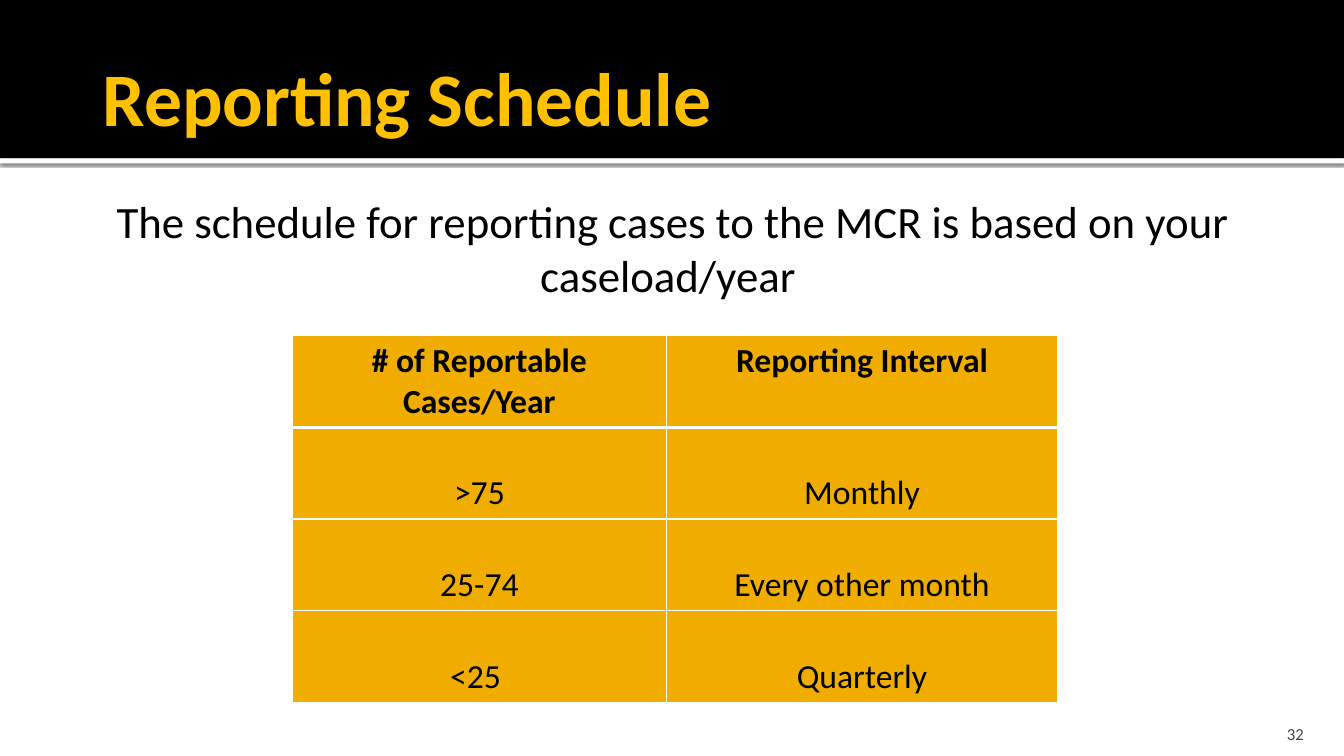
from lxml.etree import SubElement
from pptx import Presentation
from pptx.dml.color import RGBColor
from pptx.enum.shapes import MSO_SHAPE
from pptx.enum.text import MSO_ANCHOR as Anchor, PP_ALIGN as Align
from pptx.oxml import parse_xml
from pptx.oxml.ns import nsdecls, qn
from pptx.util import Inches, Pt

BLACK = RGBColor(0x00, 0x00, 0x00)
WHITE = RGBColor(0xFF, 0xFF, 0xFF)
GOLD = RGBColor(0xFF, 0xC0, 0x00)
AMBER = RGBColor(0xF0, 0xAD, 0x00)
GREY = RGBColor(0x45, 0x45, 0x45)


def write(frame, text, size, color=BLACK, bold=False, align=Align.LEFT,
          anchor=Anchor.TOP, insets=(0.1, 0.05, 0.1, 0.05)):
    """Fill a text frame with one paragraph; insets run left, top, right, bottom."""
    frame.word_wrap = True
    frame.vertical_anchor = anchor
    (frame.margin_left, frame.margin_top,
     frame.margin_right, frame.margin_bottom) = map(Inches, insets)
    paragraph = frame.paragraphs[0]
    paragraph.alignment = align
    run = paragraph.add_run()
    run.text = text
    run.font.name = "Calibri"
    run.font.size = Pt(size)
    run.font.bold = bold
    run.font.color.rgb = color


def add_border(cell, side, points):
    line = SubElement(cell._tc.get_or_add_tcPr(), qn(f"a:ln{side}"), w=str(Pt(points)))
    fill = SubElement(line, qn("a:solidFill"))
    SubElement(fill, qn("a:srgbClr"), val=str(WHITE))


deck = Presentation()
deck.slide_width, deck.slide_height = Inches(13.33), Inches(7.5)
slide = deck.slides.add_slide(deck.slide_layouts[6])
shapes = slide.shapes
slide.background.fill.solid()
slide.background.fill.fore_color.rgb = WHITE

# Header band with a shadowed white strip under it
for top, height, color in [(1.57, 0.05, WHITE), (0, 1.57, BLACK)]:
    band = shapes.add_shape(MSO_SHAPE.RECTANGLE, 0, Inches(top), Inches(13.33), Inches(height))
    band.fill.solid()
    band.fill.fore_color.rgb = color
    band.line.fill.background()
    band.shadow.inherit = False
    if color == WHITE:
        effects = band._element.spPr.find(qn("a:effectLst"))
        effects.append(parse_xml(
            f'<a:outerShdw {nsdecls("a")} blurRad="{Pt(2.5)}" dist="{Pt(0.8)}" dir="5400000">'
            '<a:srgbClr val="000000"><a:alpha val="60000"/></a:srgbClr></a:outerShdw>'))

# Title, introduction and slide number
texts = [
    ((0.92, 0.26, 11.5, 1.39), "Reporting Schedule",
     dict(size=54, color=GOLD, bold=True, anchor=Anchor.MIDDLE, insets=(0.1, 0.05, 0.05, 0.05))),
    ((0.46, 1.82, 12.47, 4.93),
     "The schedule for reporting cases to the MCR is based on your caseload/year ",
     dict(size=32, align=Align.CENTER, insets=(0.06, 0.1, 0.1, 0.05))),
    ((11.96, 7.08, 1.07, 0.3), "32",
     dict(size=12, color=GREY, align=Align.RIGHT, anchor=Anchor.BOTTOM,
          insets=(0.1, 0.05, 0.1, 0))),
]
for place, text, style in texts:
    write(shapes.add_textbox(*map(Inches, place)).text_frame, text, **style)

# Reporting intervals by caseload
schedule = [
    ("# of Reportable Cases/Year", "Reporting Interval"),
    (">75", "Monthly"),
    ("25-74", "Every other month"),
    ("<25 ", "Quarterly"),
]
table = shapes.add_table(len(schedule), 2, Inches(2.9), Inches(3.33),
                         Inches(7.59), Inches(3.64)).table
table.first_row = table.horz_banding = False
for column, width in zip(table.columns, (3.71, 3.88)):
    column.width = Inches(width)
for r, entries in enumerate(schedule):
    table.rows[r].height = Inches(0.91)
    header = r == 0
    for c, entry in enumerate(entries):
        cell = table.cell(r, c)
        write(cell.text_frame, entry, 24, bold=header, align=Align.CENTER)
        cell.vertical_anchor = Anchor.TOP if header else Anchor.BOTTOM
        for side, points in [("L", 1), ("R", 1), ("T", 3 if r == 1 else 1),
                             ("B", 3 if header else 1)]:
            add_border(cell, side, points)
        cell.fill.solid()
        cell.fill.fore_color.rgb = AMBER

deck.save("out.pptx")
